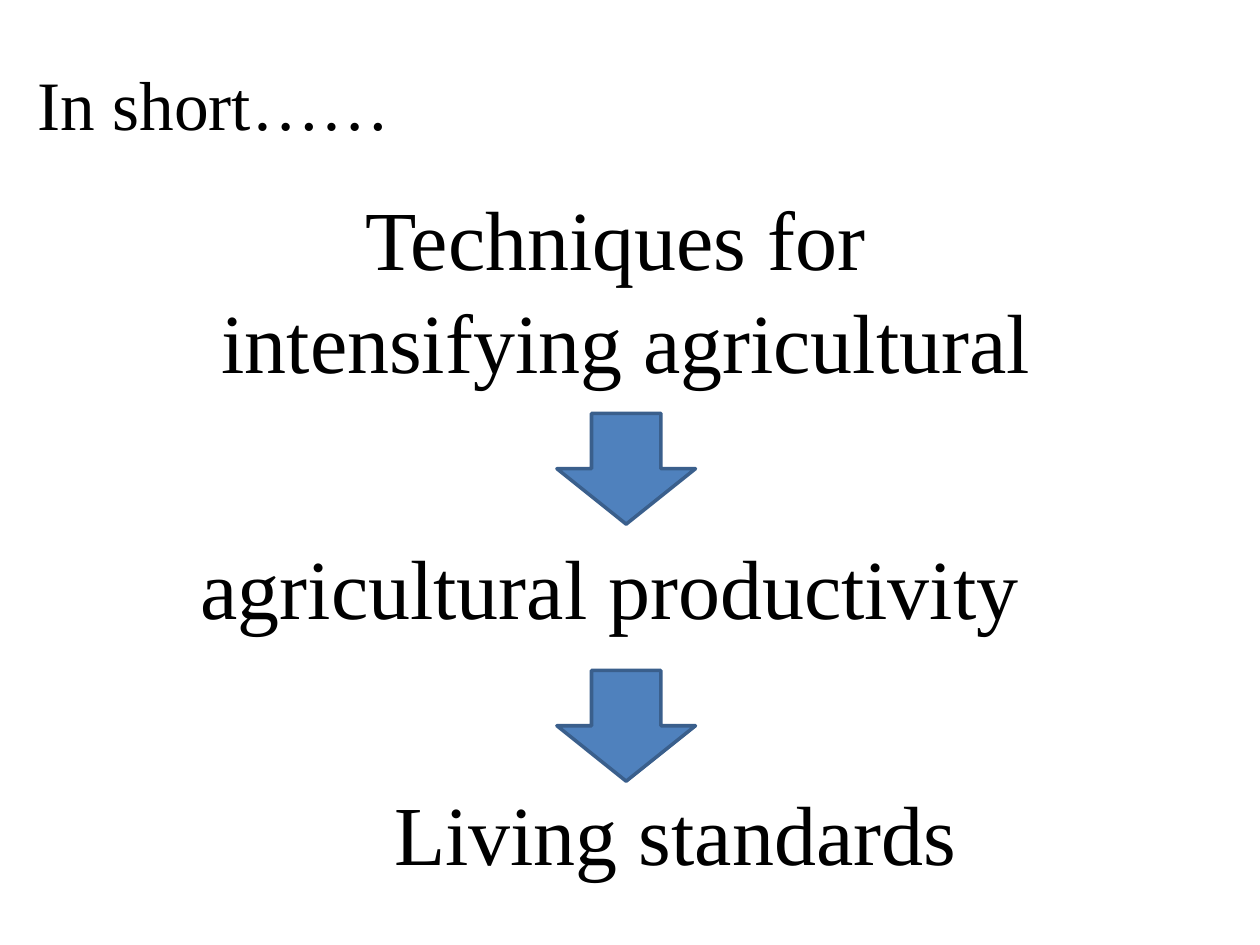
from dataclasses import dataclass

from pptx import Presentation
from pptx.dml.color import RGBColor as Rgb
from pptx.enum.shapes import MSO_SHAPE as Shape
from pptx.enum.text import MSO_ANCHOR as Anchor, PP_ALIGN as Align
from pptx.util import Inches, Pt


@dataclass(frozen=True)
class Theme:
    face: str = "Times New Roman"
    ink: Rgb = Rgb(0, 0, 0)
    fill: Rgb = Rgb(0x4F, 0x81, 0xBD)
    edge: Rgb = Rgb(0x3A, 0x5F, 0x8C)
    title: float = 39.6
    body: float = 48
    line: float = 2
    pitch: float = 1.22


THEME = Theme()


def add_text(slide, box, lines, size, align=Align.LEFT, anchor=Anchor.TOP):
    frame = slide.shapes.add_textbox(*map(Inches, box)).text_frame
    frame.word_wrap = True
    frame.vertical_anchor = anchor
    frame.margin_top = Inches(0.08)
    frame.text = "\n".join(lines)
    for para in frame.paragraphs:
        para.alignment = align
        para.line_spacing = Pt(size * THEME.pitch)
        para.font.name = THEME.face
        para.font.size = Pt(size)
        para.font.color.rgb = THEME.ink


def add_arrow(slide, box):
    arrow = slide.shapes.add_shape(Shape.DOWN_ARROW, *map(Inches, box))
    arrow.shadow.inherit = False
    arrow.fill.solid()
    arrow.fill.fore_color.rgb = THEME.fill
    arrow.line.color.rgb = THEME.edge
    arrow.line.width = Pt(THEME.line)


def add_title(slide, box):
    add_text(slide, box, ["In short……"], THEME.title, anchor=Anchor.MIDDLE)


def add_chain(slide, box):
    left, top, width, _ = box
    add_text(slide, (left + 3.03, top + 4.72, 5.28, 0.87),
             ["Living standards"], THEME.body)
    add_text(slide, (left + 0.83, top + 2.77, 8.19, 0.91),
             ["agricultural productivity "], THEME.body, Align.CENTER)
    add_text(slide, (left - 0.03, top, width, 1.72),
             ["Techniques for ", "intensifying agricultural"],
             THEME.body, Align.CENTER)
    for drop in (1.89, 3.93):
        add_arrow(slide, (left + 4.42, top + drop, 1.1, 0.88))


def main():
    deck = Presentation()
    deck.slide_width = Inches(10)
    deck.slide_height = Inches(7.5)
    slide = deck.slides.add_slide(deck.slide_layouts[6])
    add_title(slide, (0.2, 0.17, 3.16, 1.25))
    add_chain(slide, (0, 1.39, 10, 5.59))
    deck.save("out.pptx")


if __name__ == "__main__":
    main()
